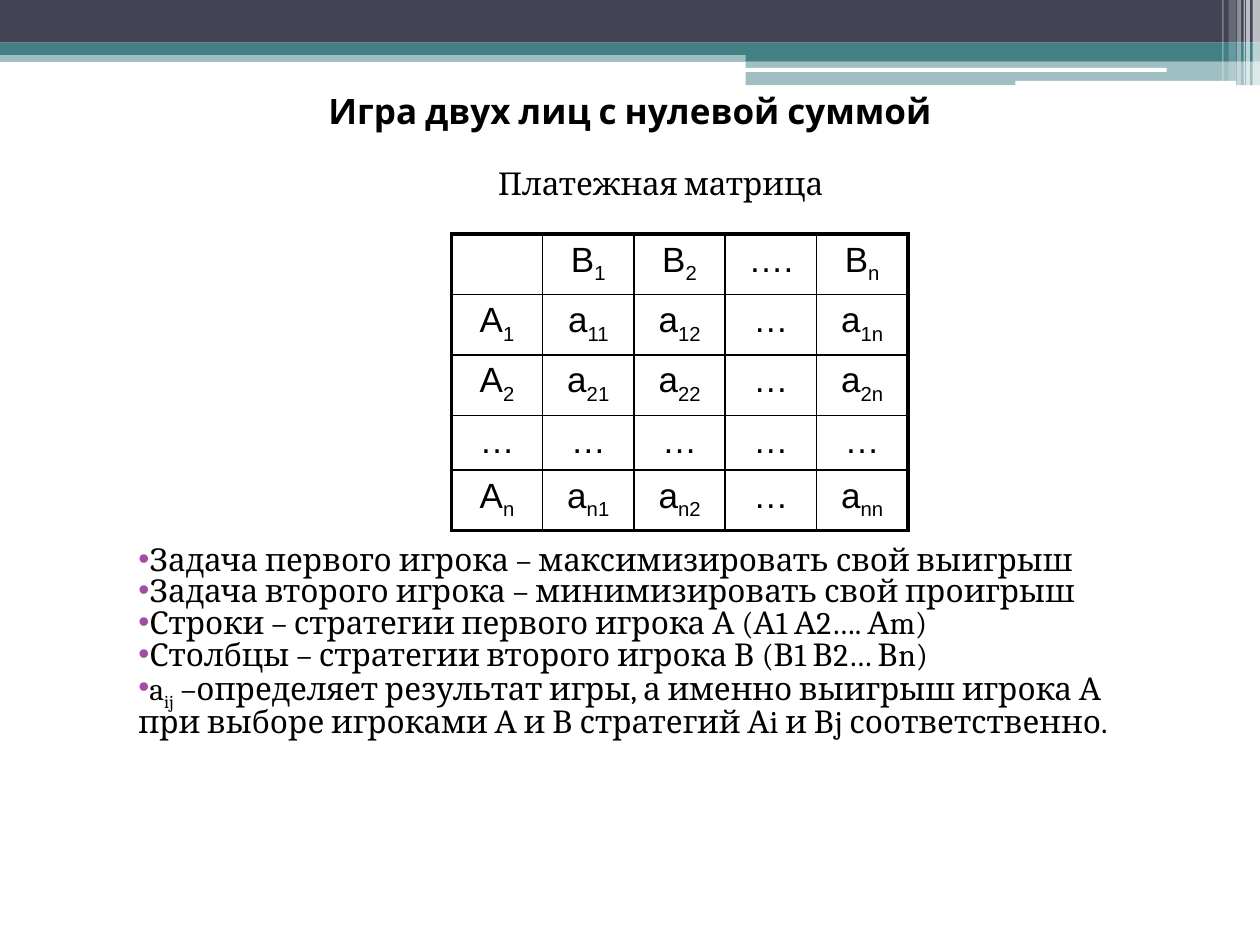
from lxml.etree import SubElement
from pptx import Presentation
from pptx.dml.color import RGBColor
from pptx.enum.shapes import MSO_SHAPE
from pptx.enum.text import MSO_ANCHOR, PP_ALIGN
from pptx.oxml.ns import qn
from pptx.util import Cm, Pt

TITLE = dict(name="Cabin", size=Pt(20), bold=True)
BODY = dict(name="Cambria", size=Pt(18))
CELL = dict(name="Arial", size=Pt(20))
SPACED = dict(line_spacing=0.8, space_before=Pt(0.8))
CENTRED = dict(alignment=PP_ALIGN.CENTER)

# left, top, width, height in cm, colour, opacity in percent
BANDS = [
    (0, 1.02, 25.4, 0.23, "438086", 50),
    (0, 0, 25.4, 0.86, "424456", 100),
    (0, 0.86, 25.4, 0.25, "438086", 100),
    (15.03, 0.99, 10.37, 0.24, "438086", 100),
    (15.03, 1.23, 10.37, 0.49, "438086", 50),
]
PILLS = [(15.01, 1.37, 8.51, 0.08), (20.47, 1.63, 4.45, 0.1)]
# left, width, height in cm, opacity in percent
STRIPES = [
    (25.25, 0.15, 1.73, 65), (25.12, 0.08, 1.73, 65), (25.07, 0.03, 1.73, 60),
    (24.94, 0.08, 1.73, 40), (24.77, 0.15, 1.63, 20), (24.64, 0.03, 1.63, 30),
]
MATRIX = [
    ["", "В_1", "В_2", "….", "В_n"],
    ["A_1", "a_11", "a_12", "…", "a_1n"],
    ["A_2", "a_21", "a_22", "…", "a_2n"],
    ["…"] * 5,
    ["A_n", "a_n1", "a_n2", "…", "a_nn"],
]
POINTS = [
    "Задача первого игрока – максимизировать свой выигрыш",
    "Задача второго игрока – минимизировать свой проигрыш",
    "Строки – стратегии первого игрока А (А1 А2…. Аm)",
    "Столбцы – стратегии второго игрока В (В1 В2… Вn)",
    "a_ij_ –определяет результат игры, а именно выигрыш игрока А",
]
LAST_LINE = "при выборе игроками А и В стратегий Аi и Вj соответственно."


def rgb(value):
    return RGBColor.from_string(value)


def apply(obj, values):
    for key, value in values.items():
        setattr(obj, key, value)


def add_bar(s, box, color, opacity=100, kind=MSO_SHAPE.RECTANGLE):
    sp = s.shapes.add_shape(kind, *map(Cm, box))
    sp.shadow.inherit = False
    sp.line.fill.background()
    sp.fill.solid()
    sp.fill.fore_color.rgb = rgb(color)
    if opacity < 100:
        clr = sp._element.spPr.find(".//" + qn("a:srgbClr"))
        SubElement(clr, qn("a:alpha"), val=str(opacity * 1000))


def write(p, text, font, layout):
    """Fill a paragraph; every second part between underscores is a subscript."""
    apply(p, layout)
    for i, part in enumerate(text.split("_")):
        if part:
            r = p.add_run()
            r.text = part
            apply(r.font, font)
            r.font.color.rgb = rgb("000000")
            if i % 2:
                r._r.get_or_add_rPr().set("baseline", "-25000")


def add_bullet(p, color):
    pPr = p._p.get_or_add_pPr()
    SubElement(SubElement(pPr, qn("a:buClr")), qn("a:srgbClr"), val=color)
    SubElement(pPr, qn("a:buFont"), typeface="Arial")
    SubElement(pPr, qn("a:buChar"), char="•")


def add_text(s, box, lines, font, layout, anchor=MSO_ANCHOR.TOP):
    tf = s.shapes.add_textbox(*map(Cm, box)).text_frame
    apply(tf, dict(word_wrap=True, vertical_anchor=anchor))
    for i, line in enumerate(lines):
        write(tf.add_paragraph() if i else tf.paragraphs[0], line, font, layout)
    return tf


def set_borders(cell, widths):
    tcPr = cell._tc.get_or_add_tcPr()
    for side, width in widths.items():
        ln = SubElement(tcPr, qn("a:ln" + side), w=str(Pt(width)))
        SubElement(SubElement(ln, qn("a:solidFill")), qn("a:srgbClr"), val="000000")


def add_matrix(s, left, top):
    n = len(MATRIX)
    col, tall, low = Cm(1.84), Cm(1.15), Cm(1.04)
    tbl = s.shapes.add_table(n, n, left, top, col * n, tall * (n - 1) + low).table
    apply(tbl, dict(first_row=False, horz_banding=False))
    for i, values in enumerate(MATRIX):
        tbl.columns[i].width = col
        tbl.rows[i].height = tall if any("_" in v for v in values) else low
        for j, text in enumerate(values):
            cell = tbl.cell(i, j)
            outer = dict(L=j == 0, R=j == n - 1, T=i == 0, B=i == n - 1)
            set_borders(cell, {k: 2.25 if v else 1 for k, v in outer.items()})
            cell.fill.background()
            write(cell.text_frame.paragraphs[0], text, CELL,
                  dict(CENTRED, space_before=Pt(4)))


def main():
    prs = Presentation()
    apply(prs, dict(slide_width=Cm(25.4), slide_height=Cm(19.05)))
    s = prs.slides.add_slide(prs.slide_layouts[6])
    for *box, color, opacity in BANDS:
        add_bar(s, box, color, opacity)
    for box in PILLS:
        add_bar(s, box, "FFFFFF", kind=MSO_SHAPE.ROUNDED_RECTANGLE)
    for left, width, height, opacity in STRIPES:
        add_bar(s, (left, 0, width, height), "FFFFFF", opacity)

    add_text(s, (1.27, 1.32, 22.86, 1.8), ["Игра двух лиц с нулевой суммой"],
             TITLE, CENTRED, MSO_ANCHOR.MIDDLE)
    add_text(s, (2.54, 3.33, 21.56, 1.1), ["Платежная матрица"],
             BODY, dict(SPACED, **CENTRED))
    add_matrix(s, Cm(9.1), Cm(4.72))
    tf = add_text(s, (2.54, 10.9, 21.56, 6.1), POINTS + [LAST_LINE], BODY, SPACED)
    for p in tf.paragraphs[:len(POINTS)]:
        add_bullet(p, "A04DA3")
    prs.save("out.pptx")


if __name__ == "__main__":
    main()
